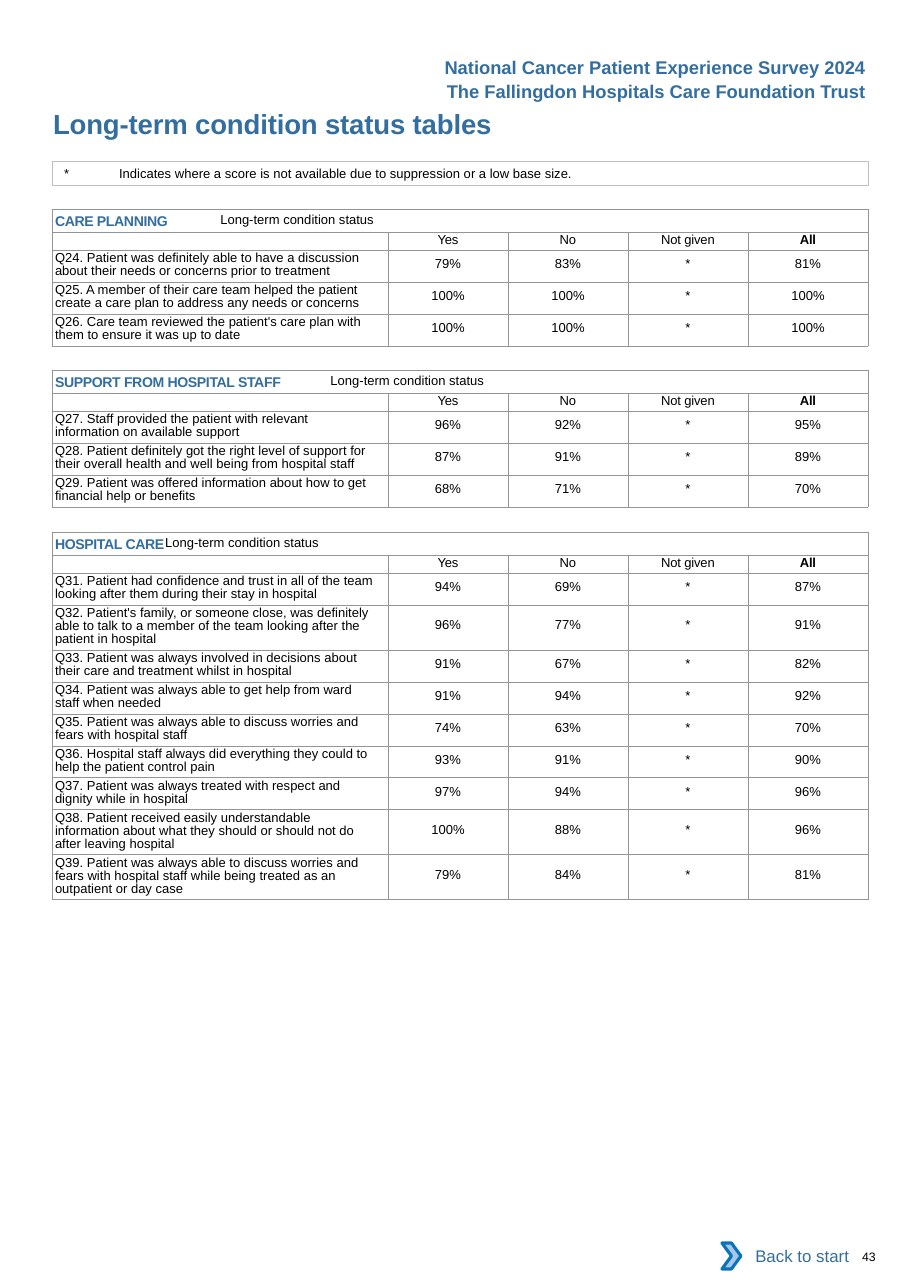
from dataclasses import dataclass

from lxml.etree import SubElement
from pptx import Presentation
from pptx.dml.color import RGBColor as RGB
from pptx.enum.shapes import MSO_SHAPE as SHAPE
from pptx.enum.text import MSO_ANCHOR as ANCHOR, PP_ALIGN as ALIGN
from pptx.oxml.ns import qn
from pptx.util import Pt

PX = 8298  # EMU in one px


@dataclass(frozen=True)
class Theme:
    font: str = "Arial"
    blue: str = "336E9F"
    black: str = "000000"
    white: str = "FFFFFF"
    grid: str = "939598"
    box: str = "BFBFBF"
    arrow_fill: str = "A8C7E9"
    arrow_line: str = "0A74BB"
    title: float = 18
    header: float = 12
    link: float = 11
    section: float = 15.8
    body: float = 8.5
    page: float = 8


T = Theme()


def write(tf, text, size=T.body, color=T.black, bold=False, align=None,
          leading=None, indent=0, tab=None, spc=0, base=0, insets=None):
    """Add a run to the first paragraph; insets are left, top, right, bottom in px."""
    p = tf.paragraphs[0]
    if insets:
        tf.margin_left, tf.margin_top, tf.margin_right, tf.margin_bottom = (
            n * PX for n in insets)
    if align is not None:
        p.alignment = align
    if leading:
        p.line_spacing = Pt(leading)
    pPr = p._p.get_or_add_pPr()
    if indent:
        pPr.set("marL", str(indent * PX))
        pPr.set("indent", "0")
    if tab:
        tabs = SubElement(pPr, qn("a:tabLst"))
        SubElement(tabs, qn("a:tab"), pos=str(tab * PX), algn="l")
    r = p.add_run()
    r.text = text
    f = r.font
    f.name, f.size, f.bold = T.font, Pt(size), bold
    f.color.rgb = RGB.from_string(color)
    rPr = r._r.get_or_add_rPr()
    if spc:
        rPr.set("spc", str(spc))
    if base:
        rPr.set("baseline", str(base))


def style_cell(cell):
    """Clear the fill, draw four thin borders and keep empty text small."""
    cell.fill.background()
    cell.margin_left = cell.margin_right = cell.margin_top = cell.margin_bottom = 0
    tcPr = cell._tc.get_or_add_tcPr()
    for i, side in enumerate(("lnL", "lnR", "lnT", "lnB")):
        ln = SubElement(tcPr, qn(f"a:{side}"), w=str(Pt(0.5)))
        fill = SubElement(ln, qn("a:solidFill"))
        SubElement(fill, qn("a:srgbClr"), val=T.grid)
        tcPr.insert(i, ln)
    p = cell.text_frame.paragraphs[0]._p
    SubElement(p, qn("a:endParaRPr"), sz=str(int(T.body * 100)))


SECTIONS = [
    ("CARE PLANNING", 209, [
        ("Q24. Patient was definitely able to have a discussion about their needs or concerns prior to treatment", "79%", "83%", "*", "81%"),
        ("Q25. A member of their care team helped the patient create a care plan to address any needs or concerns", "100%", "100%", "*", "100%"),
        ("Q26. Care team reviewed the patient's care plan with them to ensure it was up to date", "100%", "100%", "*", "100%"),
    ]),
    ("SUPPORT FROM HOSPITAL STAFF", 370, [
        ("Q27. Staff provided the patient with relevant information on available support", "96%", "92%", "*", "95%"),
        ("Q28. Patient definitely got the right level of support for their overall health and well being from hospital staff", "87%", "91%", "*", "89%"),
        ("Q29. Patient was offered information about how to get financial help or benefits", "68%", "71%", "*", "70%"),
    ]),
    ("HOSPITAL CARE", 532, [
        ("Q31. Patient had confidence and trust in all of the team looking after them during their stay in hospital", "94%", "69%", "*", "87%"),
        ("Q32. Patient's family, or someone close, was definitely able to talk to a member of the team looking after the patient in hospital", "96%", "77%", "*", "91%"),
        ("Q33. Patient was always involved in decisions about their care and treatment whilst in hospital", "91%", "67%", "*", "82%"),
        ("Q34. Patient was always able to get help from ward staff when needed", "91%", "94%", "*", "92%"),
        ("Q35. Patient was always able to discuss worries and fears with hospital staff", "74%", "63%", "*", "70%"),
        ("Q36. Hospital staff always did everything they could to help the patient control pain", "93%", "91%", "*", "90%"),
        ("Q37. Patient was always treated with respect and dignity while in hospital", "97%", "94%", "*", "96%"),
        ("Q38. Patient received easily understandable information about what they should or should not do after leaving hospital", "100%", "88%", "*", "96%"),
        ("Q39. Patient was always able to discuss worries and fears with hospital staff while being treated as an outpatient or day case", "79%", "84%", "*", "81%"),
    ]),
]
COLUMNS = ("Yes", "No", "Not given", "All")
THREE_LINES = ("Q32", "Q38", "Q39")
EARLY_WRAP = ("Q27", "Q38")
COL_WIDTHS = (336, 120, 120, 120, 120)
LEFT, WIDTH = 52, sum(COL_WIDTHS)

prs = Presentation()
prs.slide_width, prs.slide_height = 910 * PX, 1288 * PX
sl = prs.slides.add_slide(prs.slide_layouts[6])

# Page number, title and survey name
tf = sl.shapes.add_textbox(851 * PX, 1249 * PX, 56 * PX, 14 * PX).text_frame
tf.word_wrap = True
write(tf, "43", size=T.page, indent=11, insets=(0, 0, 0, 0))

tf = sl.shapes.add_textbox(LEFT * PX, 107 * PX, 496 * PX, 33 * PX).text_frame
tf.word_wrap = True
write(tf, "Long-term condition status tables", size=T.title, color=T.blue,
      bold=True, indent=1, spc=-10, insets=(0, 0, 0, 0))

for y, line in ((75, "The Fallingdon Hospitals Care Foundation Trust"),
                (51, "National Cancer Patient Experience Survey 2024")):
    tf = sl.shapes.add_textbox(433 * PX, y * PX, 444 * PX, 33 * PX).text_frame
    tf.word_wrap = False
    write(tf, line, size=T.header, color=T.blue, bold=True, align=ALIGN.RIGHT)

# Suppression note
note = sl.shapes.add_shape(SHAPE.RECTANGLE, LEFT * PX, 161 * PX, WIDTH * PX, 24 * PX)
note.shadow.inherit = False
note.fill.background()
note.line.color.rgb = RGB.from_string(T.box)
note.line.width = Pt(0.5)
note.text_frame.vertical_anchor = ANCHOR.TOP
write(note.text_frame,
      "*\tIndicates where a score is not available due to suppression or a low base size.",
      align=ALIGN.LEFT, indent=12, tab=37, insets=(0, 4, 0, 4))

# Score tables
for heading, top, questions in SECTIONS:
    heights = [23, 18] + [45 if q[0][:3] in THREE_LINES else 32 for q in questions]
    table = sl.shapes.add_table(len(heights), len(COL_WIDTHS), LEFT * PX, top * PX,
                                WIDTH * PX, sum(heights) * PX).table
    table.first_row = table.horz_banding = False
    for col, width in zip(table.columns, COL_WIDTHS):
        col.width = width * PX
    for row, height in zip(table.rows, heights):
        row.height = height * PX
        for cell in row.cells:
            style_cell(cell)

    head = table.cell(0, 0)
    head.merge(table.cell(0, 4))
    head.vertical_anchor = ANCHOR.MIDDLE
    write(head.text_frame, heading + "\t", size=T.section, color=T.blue, bold=True,
          leading=11.8, indent=3, tab=485, spc=-20, base=-8000)
    write(head.text_frame, "Long-term condition status")

    for c, name in enumerate(COLUMNS, 1):
        write(table.cell(1, c).text_frame, name, bold=name == "All",
              align=ALIGN.CENTER, leading=9.9, spc=-10)

    for i, (question, *scores) in enumerate(questions, 2):
        number = question[:3]
        cell = table.cell(i, 0)
        cell.margin_top = 2 * PX
        cell.margin_right = (26 if number in EARLY_WRAP else 10) * PX
        write(cell.text_frame, question, leading=8.6, indent=3)
        for c, score in enumerate(scores, 1):
            cell = table.cell(i, c)
            cell.margin_top = (13 if number in THREE_LINES else 7) * PX
            write(cell.text_frame, score, align=ALIGN.CENTER)

# Back to start button
button = sl.shapes.add_group_shape().shapes
label = button.add_shape(SHAPE.RECTANGLE, 730 * PX, 1233 * PX, 130 * PX, 46 * PX)
label.shadow.inherit = False
label.fill.solid()
label.fill.fore_color.rgb = RGB.from_string(T.white)
label.line.fill.background()
label.text_frame.vertical_anchor = ANCHOR.MIDDLE
write(label.text_frame, "Back to start", size=T.link, color=T.blue, align=ALIGN.RIGHT)

arrow = button.add_shape(SHAPE.CHEVRON, 722 * PX, 1243 * PX, 19 * PX, 26 * PX)
arrow.shadow.inherit = False
arrow.fill.solid()
arrow.fill.fore_color.rgb = RGB.from_string(T.arrow_fill)
arrow.line.color.rgb = RGB.from_string(T.arrow_line)
arrow.line.width = Pt(2)

prs.save("out.pptx")
